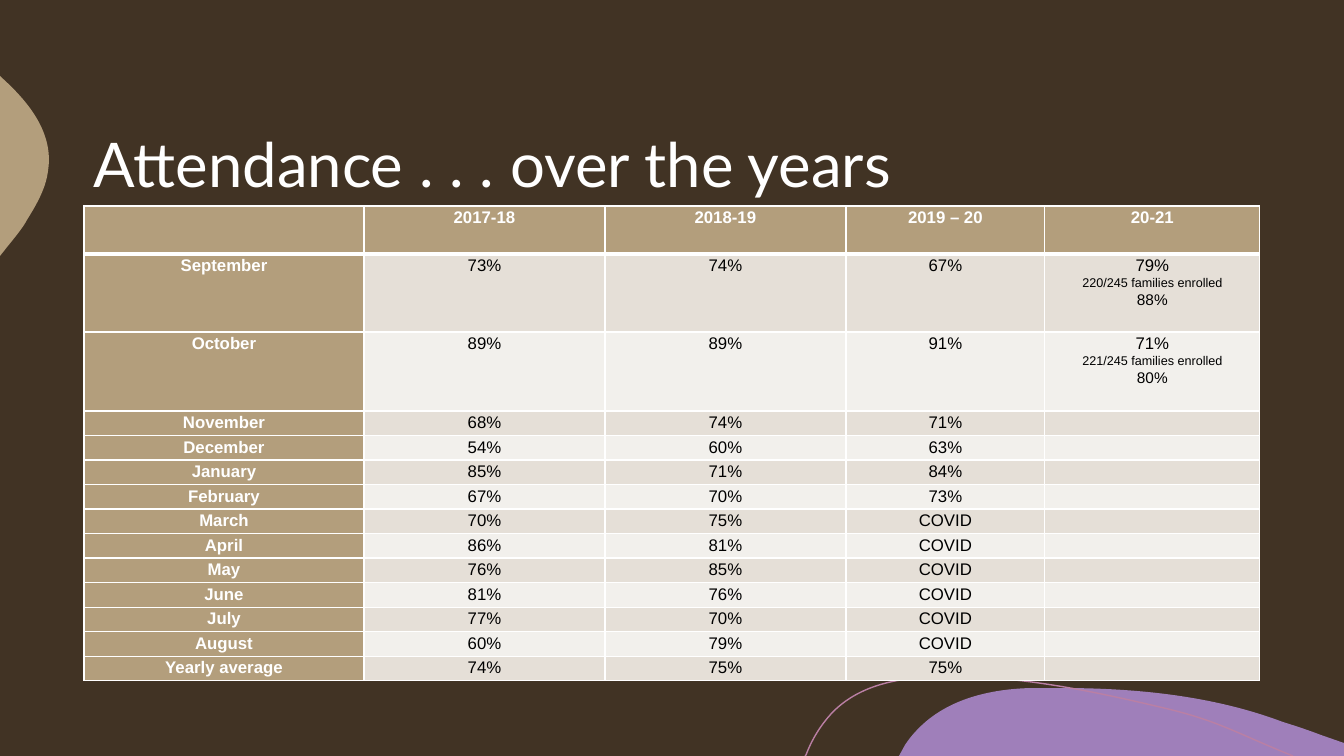
from dataclasses import dataclass

from lxml.etree import Element, SubElement
from pptx import Presentation
from pptx.dml.color import RGBColor
from pptx.enum.text import MSO_ANCHOR, PP_ALIGN
from pptx.oxml.ns import qn
from pptx.util import Pt

EMU_PER_PX = 914400 / 100.8


@dataclass(frozen=True)
class Theme:
    background: str = "413324"
    tan: str = "B39E7C"
    purple: str = "9F7FBA"
    pink: str = "BA7FA4"
    white: str = "FFFFFF"
    black: str = "000000"
    bands: tuple = ("E5DFD7", "F2F0EC")
    title_font: str = "Lato"
    table_font: str = "Arial"
    title_size: int = 44
    cell_sizes: tuple = (12, 9, 11)


THEME = Theme()

PURPLE_HILL = [
    (1062, 688), (1138, 688, 1214, 696, 1283, 722),
    (1296, 726, 1308, 730, 1321, 735), (1344, 743), (1344, 756),
    (899, 756), (905, 745), (909, 739, 913, 734, 918, 729),
    (947, 699, 990, 689, 1031, 688), (1041, 688, 1052, 688, 1062, 688),
]
TAN_BULGE = [
    (0, 76), (1, 77), (30, 103, 54, 134, 48, 171),
    (46, 188, 37, 204, 27, 220), (24, 226, 17, 235, 8, 246), (0, 256),
]
PINK_CURVE = [
    (805, 756), (806, 755), (812, 739, 821, 725, 831, 714),
    (857, 686, 896, 678, 933, 677), (963, 677),
    (1030, 677, 1109, 695, 1164, 708), (1219, 721, 1236, 733, 1293, 756),
]

COLUMN_WIDTHS = [280, 241, 241, 199, 215]
ROW_HEIGHTS = [48, 78, 79] + [270 / 11] * 11
ATTENDANCE = [
    ("", "2017-18", "2018-19", "2019 – 20", "20-21"),
    ("September", "73%", "74%", "67%", "79%\n220/245 families enrolled\n88%"),
    ("October", "89%", "89%", "91%", "71%\n221/245 families enrolled\n80%"),
    ("November", "68%", "74%", "71%", ""),
    ("December", "54%", "60%", "63%", ""),
    ("January", "85%", "71%", "84%", ""),
    ("February", "67%", "70%", "73%", ""),
    ("March", "70%", "75%", "COVID", ""),
    ("April", "86%", "81%", "COVID", ""),
    ("May", "76%", "85%", "COVID", ""),
    ("June", "81%", "76%", "COVID", ""),
    ("July", "77%", "70%", "COVID", ""),
    ("August", "60%", "79%", "COVID", ""),
    ("Yearly average", "74%", "75%", "75%", ""),
]


def px(n):
    return round(n * EMU_PER_PX)


def rgb(color):
    return RGBColor.from_string(color)


def write_text(tf, text, *, font, sizes, color, bold=False, align=PP_ALIGN.LEFT, spacing=1.0):
    for i, line in enumerate(text.split("\n")):
        p = tf.paragraphs[0] if i == 0 else tf.add_paragraph()
        p.alignment = align
        p.line_spacing = spacing
        if not line:
            p._p.get_or_add_endParaRPr().set("sz", str(sizes[i] * 100))
            continue
        r = p.add_run()
        r.text = line
        r.font.name = font
        r.font.size = Pt(sizes[i])
        r.font.bold = bold
        r.font.color.rgb = rgb(color)


def bend_segments(sp, segments):
    for step, segment in zip(list(sp._element.iter(qn("a:lnTo"))), segments):
        if len(segment) == 2:
            continue
        step.tag = qn("a:cubicBezTo")
        for i in range(2):
            x, y = segment[2 * i:2 * i + 2]
            step.insert(i, Element(qn("a:pt"), x=str(px(x) - sp.left), y=str(px(y) - sp.top)))


def add_curve(slide, outline, *, fill=None, line=None):
    start, *rest = [(px(segment[-2]), px(segment[-1])) for segment in outline]
    builder = slide.shapes.build_freeform(*start)
    builder.add_line_segments(rest, close=fill is not None)
    sp = builder.convert_to_shape()
    bend_segments(sp, outline[1:])
    sp.shadow.inherit = False
    if fill:
        sp.fill.solid()
        sp.fill.fore_color.rgb = rgb(fill)
    else:
        sp.fill.background()
    if line:
        sp.line.color.rgb = rgb(line)
        sp.line.width = Pt(1)
    else:
        sp.line.fill.background()


def add_title(slide, text):
    sp = slide.shapes.add_textbox(px(84), px(84), px(1176), px(168))
    tf = sp.text_frame
    tf.word_wrap = True
    tf.vertical_anchor = MSO_ANCHOR.MIDDLE
    write_text(tf, text, font=THEME.title_font, sizes=(THEME.title_size,),
               color=THEME.white, spacing=0.9)


def set_borders(cell, **widths):
    tc_pr = cell._tc.get_or_add_tcPr()
    for side, width in widths.items():
        ln = SubElement(tc_pr, qn(f"a:ln{side}"), w=str(Pt(width)))
        SubElement(SubElement(ln, qn("a:solidFill")), qn("a:srgbClr"), val=THEME.white)


def format_cell(cell, text, row, col):
    heading = row == 0 or col == 0
    cell.margin_left = cell.margin_right = px(6)
    cell.margin_top = px(1)
    cell.margin_bottom = 0
    cell.vertical_anchor = MSO_ANCHOR.TOP
    set_borders(cell, L=1, R=1, T=1, B=3 if row == 0 else 1)
    cell.fill.solid()
    cell.fill.fore_color.rgb = rgb(THEME.tan if heading else THEME.bands[(row - 1) % 2])
    write_text(cell.text_frame, text, font=THEME.table_font, sizes=THEME.cell_sizes,
               color=THEME.white if heading else THEME.black, bold=heading,
               align=PP_ALIGN.CENTER, spacing=1.07)


def add_attendance_table(slide):
    frame = slide.shapes.add_table(len(ATTENDANCE), len(COLUMN_WIDTHS), px(84), px(206),
                                   px(sum(COLUMN_WIDTHS)), px(sum(ROW_HEIGHTS)))
    table = frame.table
    table.horz_banding = False
    for column, width in zip(table.columns, COLUMN_WIDTHS):
        column.width = px(width)
    for i, (height, values) in enumerate(zip(ROW_HEIGHTS, ATTENDANCE)):
        table.rows[i].height = px(height)
        for j, value in enumerate(values):
            format_cell(table.cell(i, j), value, i, j)


def main():
    prs = Presentation()
    prs.slide_width, prs.slide_height = px(1344), px(756)
    slide = prs.slides.add_slide(prs.slide_layouts[6])
    slide.background.fill.solid()
    slide.background.fill.fore_color.rgb = rgb(THEME.background)
    add_curve(slide, PURPLE_HILL, fill=THEME.purple)
    add_curve(slide, TAN_BULGE, fill=THEME.tan)
    add_curve(slide, PINK_CURVE, line=THEME.pink)
    add_title(slide, "Attendance . . . over the years")
    add_attendance_table(slide)
    prs.save("out.pptx")


if __name__ == "__main__":
    main()
